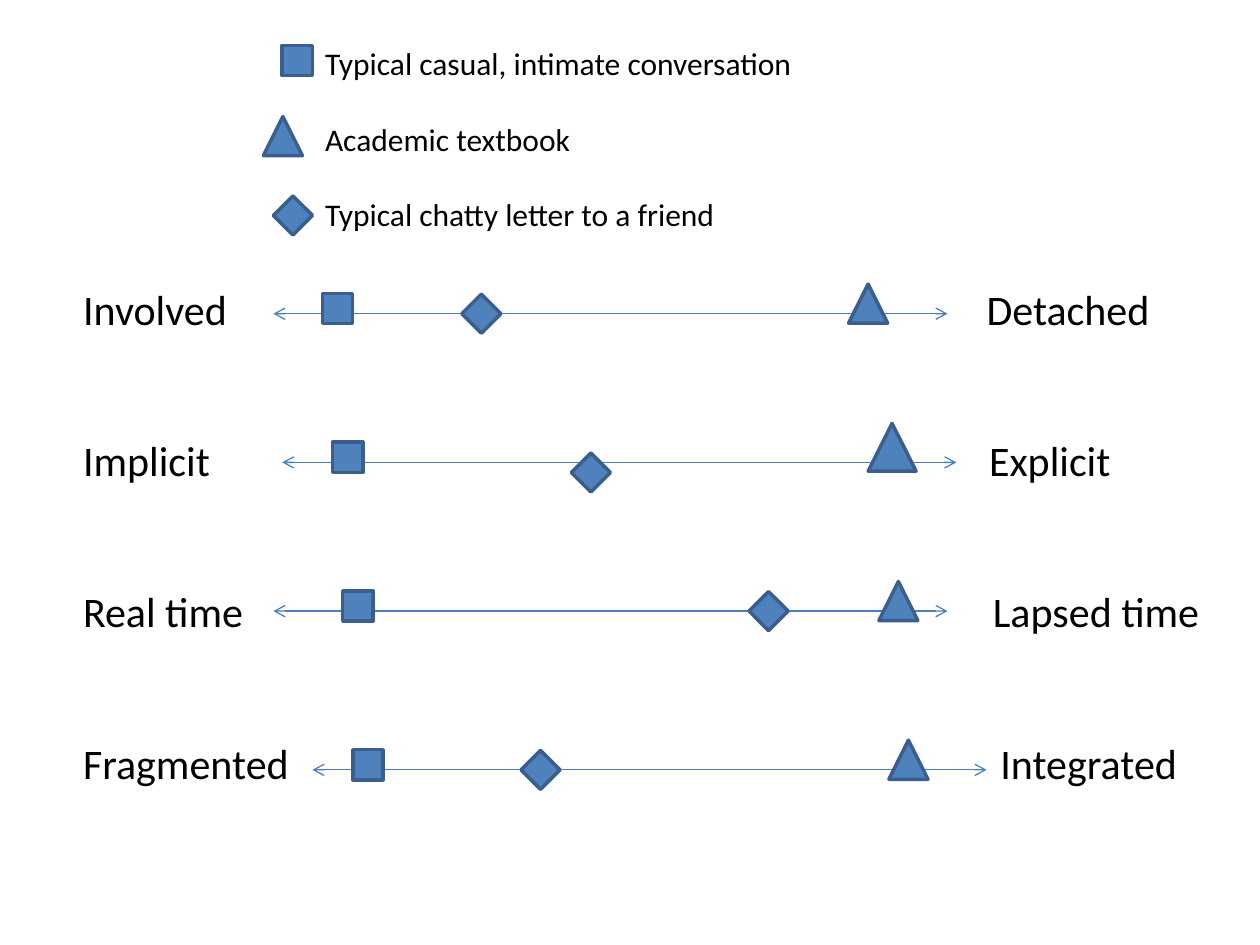
"""Build a slide that places three kinds of text on four scales of style."""
from collections import namedtuple

import pptx
import pptx.dml.color
import pptx.enum.shapes
import pptx.enum.text
import pptx.oxml
import pptx.util
from lxml import etree

WIDTH, HEIGHT = 10, 7.5
ROW = 1.2
LEGEND_ROW = 0.6
AXIS_LENGTH = 0.535
FILL, OUTLINE, AXIS, TEXT = "4F81BD", "3A5F8C", "4B7EBC", "000000"

SHAPES = pptx.enum.shapes.MSO_SHAPE
SQUARE = (SHAPES.RECTANGLE, 0.24)
DIAMOND = (SHAPES.FLOWCHART_DECISION, 0.31)
TRIANGLE = (SHAPES.ISOSCELES_TRIANGLE, 0.31)
LARGE_TRIANGLE = (SHAPES.ISOSCELES_TRIANGLE, 0.38)

Box = namedtuple("Box", "left top width height")
Scale = namedtuple("Scale", "start end end_x axis_x axis_drop markers")

LEGEND = [
    ("Typical casual, intimate conversation", SQUARE, 0.236, -0.02),
    ("Academic textbook", TRIANGLE, 0.2245, -0.02),
    ("Typical chatty letter to a friend", DIAMOND, 0.2325, 0.01),
]

SCALES = [
    Scale("Involved", "Detached", 0.783, 0.217, 0.04,
          [(SQUARE, 0.268, -0.04), (DIAMOND, 0.382, 0), (TRIANGLE, 0.689, -0.08)]),
    Scale("Implicit", "Explicit", 0.785, 0.224, 0.02,
          [(SQUARE, 0.276, -0.04), (DIAMOND, 0.469, 0.08), (LARGE_TRIANGLE, 0.708, -0.12)]),
    Scale("Real time", "Lapsed time", 0.788, 0.217, 0,
          [(SQUARE, 0.284, -0.04), (DIAMOND, 0.61, 0), (TRIANGLE, 0.713, -0.08)]),
    Scale("Fragmented", "Integrated", 0.794, 0.248, 0.06,
          [(SQUARE, 0.292, -0.04), (DIAMOND, 0.429, 0), (TRIANGLE, 0.721, -0.08)]),
]


def inches(*lengths):
    """Convert lengths in inches to slide units."""
    return [pptx.util.Inches(length) for length in lengths]


def color(value):
    """Return the colour of a hex string."""
    return pptx.dml.color.RGBColor.from_string(value)


def add_text(slide, text, left, middle, width, size=24, font="Calibri", fill=TEXT):
    """Add one line of text centred vertically on a given height."""
    height = size / 40
    shape = slide.shapes.add_textbox(*inches(left, middle - height / 2, width, height))
    frame = shape.text_frame
    frame.word_wrap = True
    frame.vertical_anchor = pptx.enum.text.MSO_ANCHOR.MIDDLE
    frame.margin_left = frame.margin_right = frame.margin_top = frame.margin_bottom = 0
    run = frame.paragraphs[0].add_run()
    run.text = text
    run.font.size = pptx.util.Pt(size)
    run.font.name = font
    run.font.color.rgb = color(fill)


def add_marker(slide, marker, center, middle):
    """Add a marker around its centre point."""
    kind, size = marker
    shape = slide.shapes.add_shape(
        kind, *inches(center - size / 2, middle - size / 2, size, size))
    shape.shadow.inherit = False
    shape.fill.solid()
    shape.fill.fore_color.rgb = color(FILL)
    shape.line.color.rgb = color(OUTLINE)
    shape.line.width = pptx.util.Pt(2)


def add_axis(slide, left, right, middle):
    """Add a horizontal line with an open arrowhead at both ends."""
    connector = slide.shapes.add_connector(
        pptx.enum.shapes.MSO_CONNECTOR.STRAIGHT, *inches(left, middle, right, middle))
    connector.line.color.rgb = color(AXIS)
    connector.line.width = pptx.util.Pt(0.75)
    line = connector.line._get_or_add_ln()
    for end in ("a:headEnd", "a:tailEnd"):
        etree.SubElement(line, pptx.oxml.ns.qn(end), type="arrow")
    etree.SubElement(connector._element.spPr, pptx.oxml.ns.qn("a:effectLst"))


def draw_legend(slide, box):
    """Draw one marker and its meaning in each row of the box."""
    row_height = box.height / len(LEGEND)
    for index, (text, marker, share, drop) in enumerate(LEGEND):
        middle = box.top + (index + 0.5) * row_height
        add_marker(slide, marker, box.left + share * box.width, middle + drop)
        add_text(slide, text, box.left + 0.258 * box.width, middle, 0.45 * box.width, size=18)


def draw_scale(slide, box, scale):
    """Draw the two end labels, the axis and the markers of a scale."""
    middle = box.top + box.height / 2
    axis_middle = middle + scale.axis_drop
    add_text(slide, scale.start, box.left + 0.066 * box.width, middle, 0.18 * box.width)
    add_text(slide, scale.end, box.left + scale.end_x * box.width, middle, 0.2 * box.width)
    axis_left = box.left + scale.axis_x * box.width
    add_axis(slide, axis_left, axis_left + AXIS_LENGTH * box.width, axis_middle)
    for marker, share, drop in scale.markers:
        add_marker(slide, marker, box.left + share * box.width, axis_middle + drop)


def main():
    """Build and save the slide."""
    presentation = pptx.Presentation()
    presentation.slide_width, presentation.slide_height = inches(WIDTH, HEIGHT)
    slide = presentation.slides.add_slide(presentation.slide_layouts[6])
    legend = Box(0, 0.2, WIDTH, LEGEND_ROW * len(LEGEND))
    draw_legend(slide, legend)
    scales_top = legend.top + legend.height - 0.15
    for index, scale in enumerate(SCALES):
        draw_scale(slide, Box(0, scales_top + index * ROW, WIDTH, ROW), scale)
    presentation.save("out.pptx")


if __name__ == "__main__":
    main()
